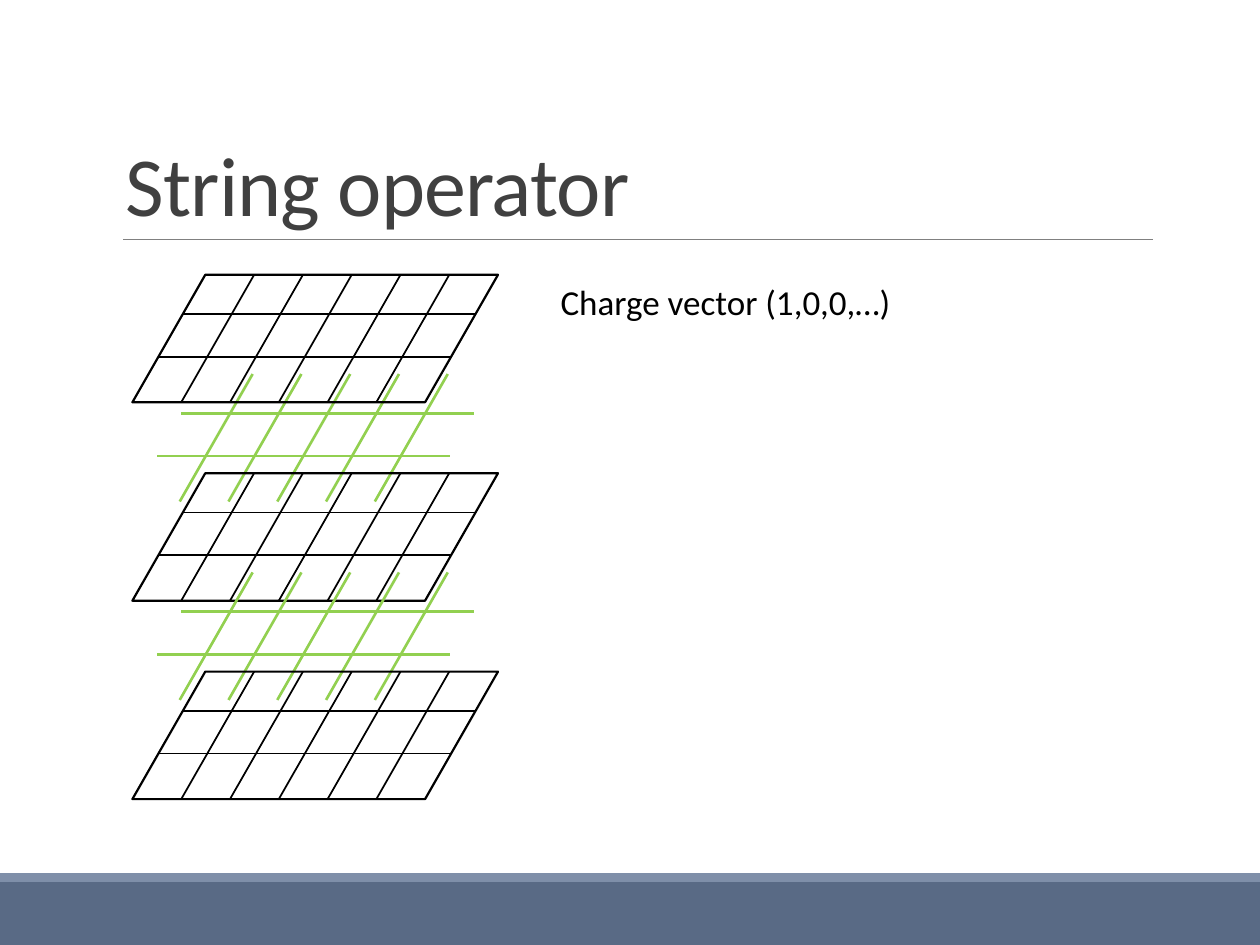
from lxml.etree import SubElement
from pptx import Presentation
from pptx.dml.color import RGBColor
from pptx.enum.shapes import MSO_CONNECTOR, MSO_SHAPE
from pptx.enum.text import MSO_ANCHOR
from pptx.oxml.ns import qn
from pptx.util import Cm, Pt

THEME = {
    "font": "Calibri", "title": 48, "body": 20,
    "dark": "404040", "ink": "000000", "rule": "808080",
    "string": "92D050", "band": "596A85", "trim": "7F8FA9",
}
# left, top, width, height in cm
BANDS = [((0, 17.78, 25.4, 1.27), "band"), ((0, 17.6, 25.4, 0.18), "trim")]
TEXTS = [
    ("String operator", (2.29, 0.79, 20.95, 4.04), "title", "dark",
     {"vertical_anchor": MSO_ANCHOR.BOTTOM}, {"line_spacing": 0.85}, "-50"),
    ("Charge vector (1,0,0,…)", (11.05, 5.54, 12.6, 1.12), "body", "ink",
     {}, {}, None),
]
LEFT, TOP, WIDE, HIGH, SKEW = 2.67, 5.54, 7.37, 2.57, 1.47
COLS, ROWS = 6, (0.79, 1.65)
HALF = 2  # half the distance between two lattices
# Level in half steps, back to front; odd levels hold the strings
LEVELS = [1, 2, 0, 3, 4]


def color(name):
    return RGBColor.from_string(THEME[name])


def line(shapes, start, end, name, width):
    item = shapes.add_connector(MSO_CONNECTOR.STRAIGHT, *map(Cm, start + end))
    item.line.color.rgb = color(name)
    item.line.width = Pt(width)
    SubElement(item._element.spPr, qn("a:effectLst"))


def band(shapes, box, name):
    item = shapes.add_shape(MSO_SHAPE.RECTANGLE, *map(Cm, box))
    item.shadow.inherit = False
    item.fill.solid()
    item.fill.fore_color.rgb = color(name)
    item.line.fill.background()


def write(shapes, words, box, size, name, frame, para, space):
    body = shapes.add_textbox(*map(Cm, box)).text_frame
    body.word_wrap = True
    part = body.paragraphs[0]
    run = part.add_run()
    run.text = words
    run.font.color.rgb = color(name)
    font = {"name": THEME["font"], "size": Pt(THEME[size])}
    for target, values in ((body, frame), (part, para), (run.font, font)):
        for key, value in values.items():
            setattr(target, key, value)
    if space:
        run._r.get_or_add_rPr().set("spc", space)


def frame(shapes, top):
    item = shapes.add_shape(MSO_SHAPE.PARALLELOGRAM,
                            *map(Cm, (LEFT, top, WIDE, HIGH)))
    item.adjustments[0] = SKEW / HIGH
    item.shadow.inherit = False
    item.fill.background()
    item.line.color.rgb = color("ink")
    item.line.width = Pt(1.25)


def grid(shapes, left, top, name, width):
    """Draw the inner lines of one slanted lattice."""
    base = WIDE - SKEW
    for col in range(1, COLS):
        foot = left + col * base / COLS
        line(shapes, (foot + SKEW, top), (foot, top + HIGH), name, width)
    for row in ROWS:
        start = left + SKEW * (1 - row / HIGH)
        line(shapes, (start, top + row), (start + base, top + row), name, width)


def main():
    deck = Presentation()
    deck.slide_width, deck.slide_height = Cm(25.4), Cm(19.05)
    shapes = deck.slides.add_slide(deck.slide_layouts[6]).shapes
    for box, name in BANDS:
        band(shapes, box, name)
    line(shapes, (2.48, 4.83), (23.24, 4.83), "rule", 0.5)
    for level in LEVELS:
        group = shapes.add_group_shape().shapes
        top = TOP + level * HALF
        if level % 2:
            grid(group, LEFT - 0.03, top, "string", 1.5)
        else:
            frame(group, top)
            grid(group, LEFT, top, "ink", 1)
    for text in TEXTS:
        write(shapes, *text)
    deck.save("out.pptx")


if __name__ == "__main__":
    main()
